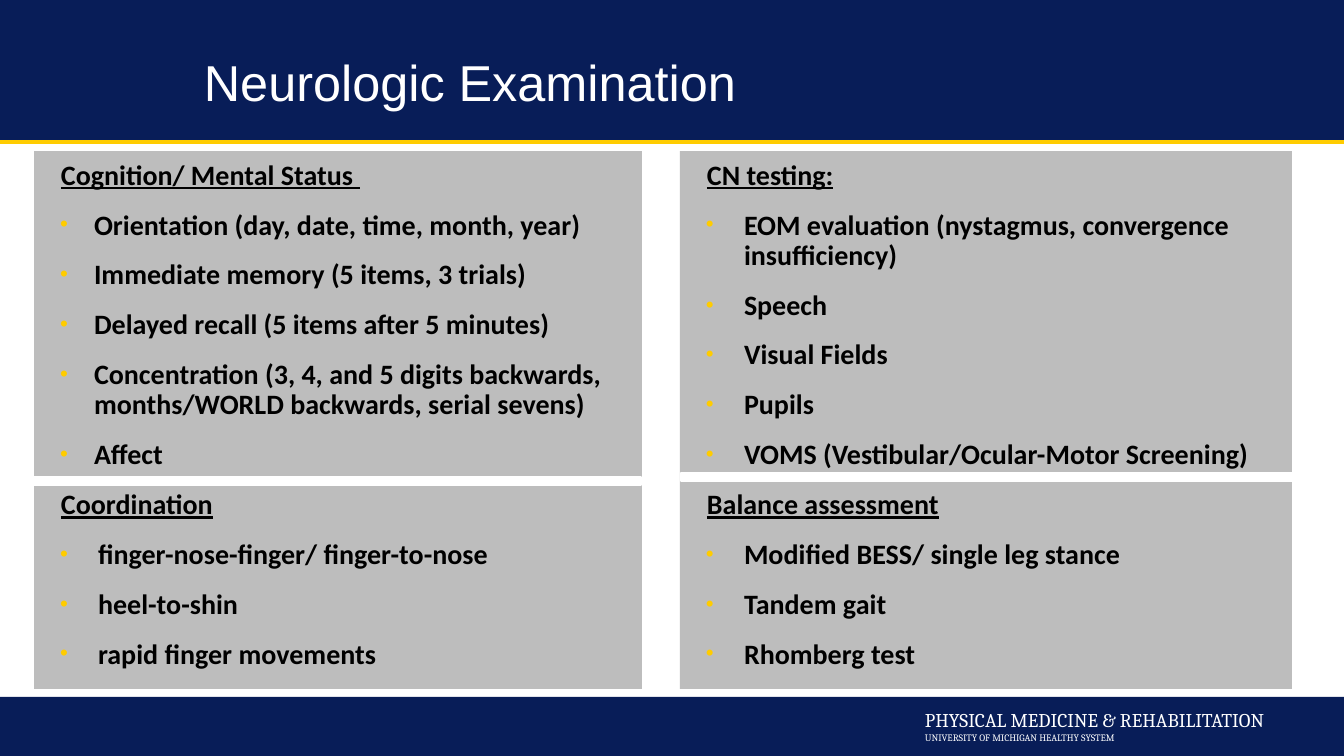
from pptx import Presentation
from pptx.dml.color import RGBColor
from pptx.enum.shapes import MSO_CONNECTOR, MSO_SHAPE
from pptx.enum.text import MSO_ANCHOR, PP_ALIGN
from pptx.oxml.ns import qn
from pptx.util import Pt
from lxml.etree import SubElement

THEME = {
    "navy": RGBColor.from_string("081D58"),
    "gold": RGBColor.from_string("FFCC00"),
    "gray": RGBColor.from_string("BDBDBD"),
    "white": RGBColor.from_string("FFFFFF"),
    "black": RGBColor.from_string("000000"),
    "title": {"name": "Arial", "size": Pt(36)},
    "dept": {"name": "Cambria", "size": Pt(13.9)},
    "school": {"name": "Cambria", "size": Pt(7)},
    "head": {"name": "Calibri", "size": Pt(20), "bold": True, "underline": True},
    "item": {"name": "Calibri", "size": Pt(20), "bold": True, "underline": False},
}
SCALE = 914400 / 100.8

deck = Presentation()
deck.slide_width, deck.slide_height = round(1344 * SCALE), round(756 * SCALE)
slide = deck.slides.add_slide(deck.slide_layouts[6])
shapes = slide.shapes


def block(box, color):
    rect = shapes.add_shape(MSO_SHAPE.RECTANGLE, *[round(n * SCALE) for n in box])
    rect.shadow.inherit = False
    rect.fill.solid()
    rect.fill.fore_color.rgb = THEME[color]
    rect.line.fill.background()
    return rect


def write(frame, text, style, color, **form):
    para = frame.paragraphs[0]
    if para.runs:
        para = frame.add_paragraph()
    for key, value in form.items():
        setattr(para, key, value)
    run = para.add_run()
    run.text = text
    for key, value in THEME[style].items():
        setattr(run.font, key, value)
    run.font.color.rgb = THEME[color]
    return para


block((0, 0, 1344, 144), "navy")
rule = shapes.add_connector(
    MSO_CONNECTOR.STRAIGHT, 0, round(142 * SCALE), deck.slide_width, round(142 * SCALE)
)
rule.line.color.rgb = THEME["gold"]
rule.line.width = Pt(2.25)
SubElement(rule._element.spPr, qn("a:effectLst"))
block((0, 697, 1344, 59), "navy")

foot = shapes.add_textbox(*[round(n * SCALE) for n in (915, 708, 406, 43)]).text_frame
foot.word_wrap = True
write(foot, "PHYSICAL MEDICINE & REHABILITATION", "dept", "white", line_spacing=0.8)
write(foot, "UNIVERSITY OF MICHIGAN HEALTHY SYSTEM", "school", "white",
      line_spacing=0.8, space_before=Pt(1.5))

title = shapes.add_textbox(*[round(n * SCALE) for n in (194, 56, 1080, 61)]).text_frame
title.word_wrap = True
title.vertical_anchor = MSO_ANCHOR.BOTTOM
write(title, "Neurologic Examination", "title", "white", line_spacing=0.85)

panels = [
    ((34, 151, 608, 538), [
        ("Cognition/ Mental Status ", 50, 34, [
            "Orientation (day, date, time, month, year)",
            "Immediate memory (5 items, 3 trials)",
            "Delayed recall (5 items after 5 minutes)",
            "Concentration (3, 4, and 5 digits backwards, months/WORLD backwards, serial sevens)",
            "Affect",
        ]),
        ("Coordination", 54, 38, [
            "finger-nose-finger/ finger-to-nose",
            "heel-to-shin",
            "rapid finger movements",
        ]),
    ]),
    ((680, 151, 612, 538), [
        ("CN testing:", 54, 38, [
            "EOM evaluation (nystagmus, convergence insufficiency)",
            "Speech",
            "Visual Fields",
            "Pupils",
            "VOMS (Vestibular/Ocular-Motor Screening)",
        ]),
        ("Balance assessment", 54, 38, [
            "Modified BESS/ single leg stance",
            "Tandem gait",
            "Rhomberg test",
        ]),
    ]),
]

for box, groups in panels:
    frame = block(box, "gray").text_frame
    inset = round(10 * SCALE)
    form = {"word_wrap": True, "vertical_anchor": MSO_ANCHOR.TOP,
            "margin_left": inset, "margin_right": inset,
            "margin_top": inset, "margin_bottom": inset}
    for key, value in form.items():
        setattr(frame, key, value)
    gap = Pt(0)
    for head, left, hang, items in groups:
        para = write(frame, head, "head", "black", alignment=PP_ALIGN.LEFT,
                     line_spacing=0.9, space_before=gap)
        para._p.get_or_add_pPr().set("marL", str(round(17 * SCALE)))
        gap = Pt(14)
        for item in items:
            para = write(frame, item, "item", "black", alignment=PP_ALIGN.LEFT,
                         line_spacing=0.9, space_before=gap)
            props = para._p.get_or_add_pPr()
            props.set("marL", str(round(left * SCALE)))
            props.set("indent", str(round(-hang * SCALE)))
            tint = SubElement(props, qn("a:buClr"))
            SubElement(tint, qn("a:srgbClr"), val=str(THEME["gold"]))
            SubElement(props, qn("a:buSzPct"), val="80000")
            SubElement(props, qn("a:buFont"), typeface="Arial")
            SubElement(props, qn("a:buChar"), char="•")

for left, top in ((28, 477), (681, 473)):
    bar = block((left, top, 613, 8), "white")
    bar.line.color.rgb = THEME["white"]
    bar.line.width = Pt(2)

deck.save("out.pptx")
